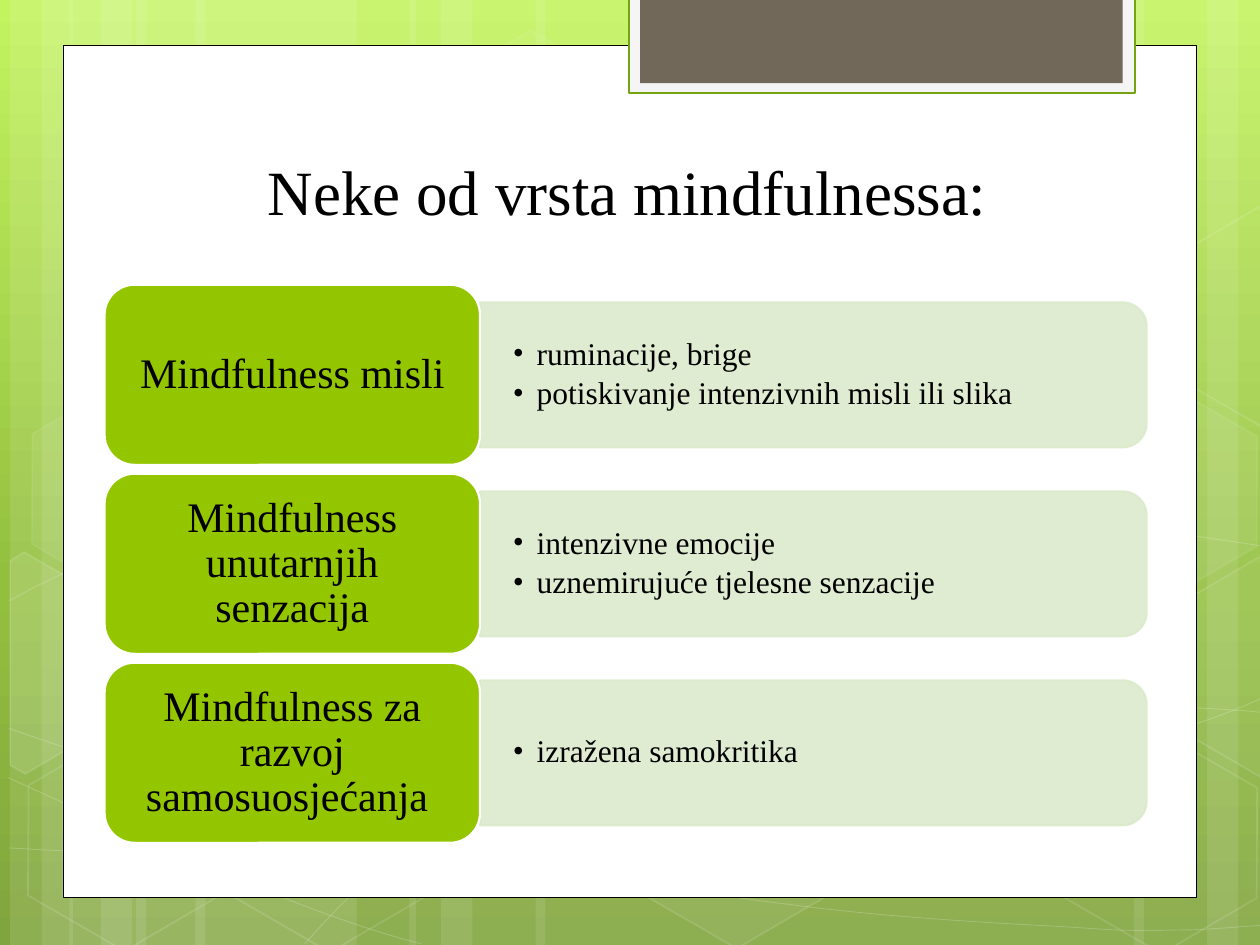
import math
from lxml import etree
from copy import deepcopy
from pptx import Presentation, util as u
from pptx.dml.color import RGBColor
from pptx.enum import shapes, text
from pptx.oxml.ns import qn

WHITE = RGBColor(0xFF, 0xFF, 0xFF)
BLACK = RGBColor(0x00, 0x00, 0x00)
GREEN = RGBColor(0x94, 0xC6, 0x00)
PALE = RGBColor(0xDC, 0xEA, 0xCC)
TAB_PAPER = RGBColor(0xF5, 0xF5, 0xF5)
TAB_EDGE = RGBColor(0x74, 0xA5, 0x10)
TAB_BROWN = RGBColor(0x71, 0x68, 0x5A)
SKY = [(0, RGBColor(0xC3, 0xF3, 0x5F)), (0.62, RGBColor(0x93, 0xBF, 0x3F)),
       (1, RGBColor(0x81, 0xA5, 0x3E))]
FONT = "Times New Roman"
KIND = shapes.MSO_SHAPE
TILT = 30  # degrees, for every hexagon

presentation = Presentation()
presentation.slide_width, presentation.slide_height = u.Inches(10), u.Inches(7.5)
cell = presentation.slide_width // 10  # square grid: 10 columns, 7.5 rows
slide = presentation.slides.add_slide(presentation.slide_layouts[5])
items = slide.shapes


def cells(*lengths):
    return [round(length * cell) for length in lengths]


def paint(shape, fill=None, line=None, width=1.0, fill_alpha=100, line_alpha=100):
    """Fill and outline a shape; alphas are percentages."""
    shape.shadow.inherit = False
    for part, color in ((shape.fill, fill), (shape.line.fill, line)):
        if color is None:
            part.background()
        else:
            part.solid()
            part.fore_color.rgb = color
    if line is not None:
        shape.line.width = u.Pt(width)
    properties = shape._element.spPr
    for route, alpha in (("a:solidFill", fill_alpha), ("a:ln/a:solidFill", line_alpha)):
        steps = "/".join(qn(step) for step in (route + "/a:srgbClr").split("/"))
        color = properties.find(steps)
        if color is not None and alpha < 100:
            etree.SubElement(color, qn("a:alpha")).set("val", str(alpha * 1000))


# Background gradient, top to bottom
background = slide.background.fill
background.gradient()
background.gradient_angle = 270
stop_list = slide._element.find(".//" + qn("a:gsLst"))
stop_list.append(deepcopy(stop_list[0]))
for stop, (position, color) in zip(background.gradient_stops, SKY):
    stop.position = position
    stop.color.rgb = color

# Translucent vertical bands
for left, width in [(1.08, 1.75), (0.08, 0.5), (0.33, 0.83), (1.55, 1.75),
                    (0.55, 0.5), (0.8, 0.83), (7.33, 1.75), (9.58, 0.5),
                    (9, 0.83), (4.25, 3.08), (3.25, 0.5), (3.5, 0.83)]:
    band = items.add_shape(KIND.RECTANGLE, *cells(left, 0, width, 7.5))
    paint(band, WHITE, fill_alpha=10)

# Sweeping curves: a start point, then cubic segments of three points each
curves = [
    [(0.07, 6.73), (0.61, 6.76), (1.15, 6.79), (1.9, 6.78), (2.65, 6.77), (3.58, 6.75),
     (4.58, 6.65), (5.58, 6.55), (7, 6.36), (7.92, 6.17), (8.83, 5.98), (9.77, 5.68),
     (10.07, 5.51)],
    [(0.07, 4.77), (0.36, 4.61), (0.65, 4.46), (1.21, 4.31), (1.78, 4.16), (2.59, 3.94),
     (3.47, 3.87), (4.36, 3.8), (5.44, 3.79), (6.54, 3.87), (7.64, 3.95), (9.47, 4.26),
     (10.07, 4.34)],
    [(0.06, 6.17), (1.27, 6.72), (2.47, 7.27), (3.34, 7.49)],
    [(0.07, 5.78), (0.38, 5.89), (0.7, 6), (1.28, 6.16), (1.86, 6.31), (2.73, 6.56),
     (3.57, 6.73), (4.4, 6.9), (5.45, 7.08), (6.28, 7.18), (7.11, 7.29), (8, 7.33),
     (8.53, 7.36), (9.05, 7.4), (9.19, 7.38), (9.45, 7.38), (9.71, 7.37), (9.89, 7.35),
     (10.07, 7.34)],
    [(2.42, 7.49), (2.6, 7.29), (2.78, 7.09), (3.02, 6.91), (3.26, 6.73), (3.6, 6.53),
     (3.88, 6.39), (4.16, 6.25), (4.33, 6.19), (4.7, 6.09), (5.06, 5.99), (5.73, 5.85),
     (6.08, 5.78), (6.44, 5.71), (6.49, 5.71), (6.8, 5.69), (7.11, 5.66), (7.6, 5.63),
     (7.94, 5.62), (8.29, 5.61), (8.86, 5.62), (8.86, 5.62), (9.08, 5.62), (9.31, 5.62),
     (9.53, 5.62), (9.71, 5.63), (9.88, 5.64), (9.97, 5.65), (10.06, 5.66),
     (10.03, 5.65), (10.06, 5.66)],
]
for points in curves:
    builder = items.build_freeform(*cells(*points[0]))
    builder.add_line_segments([cells(*point) for point in points[1:]], close=False)
    curve = builder.convert_to_shape()
    # Join every three straight steps into one cubic segment
    steps = curve._element.findall(".//" + qn("a:lnTo"))
    outline = steps[0].getparent()
    for first in range(0, len(steps), 3):
        cubic = etree.SubElement(outline, qn("a:cubicBezTo"))
        for step in steps[first:first + 3]:
            cubic.append(step[0])
            outline.remove(step)
    paint(curve, line=WHITE, width=0.5, line_alpha=20)

# Hexagons: left, top, fill alpha, line alpha
for left, top, fill_alpha, line_alpha in [
        (3.34, 0.36, 4, 8), (4.97, 5.89, 6, 12), (0.11, 5.91, 0, 12),
        (0.14, 3.12, 7, 8), (1.74, 5.92, 0, 12), (7.53, 4.53, 10, 12),
        (8.34, 5.93, 0, 12), (8.34, 3.14, 7, 8)]:
    hexagon = items.add_shape(KIND.HEXAGON, *cells(left, top, 1.75, 1.52))
    hexagon.adjustments[0] = 0.285
    hexagon.rotation = TILT
    paint(hexagon, WHITE if fill_alpha else None, WHITE, 1, fill_alpha, line_alpha)

# Hexagons cut off by the slide's edges: fill alpha, centre, corners on the slide
cosine, sine = math.cos(math.radians(TILT)), math.sin(math.radians(TILT))
for fill_alpha, (x0, y0), points in [
        (10, (0.36, 5.35), [(0.08, 4.45), (0.19, 4.38), (0.96, 4.82), (0.95, 5.7),
                            (0.2, 6.14), (0.08, 6.07)]),
        (4, (9.85, 5.2), [(9.26, 4.85), (10.01, 4.41), (10.09, 4.46), (10.09, 6.13),
                          (10.02, 6.17), (9.26, 5.73)]),
        (0, (9.85, 2.41), [(9.26, 2.07), (10.01, 1.63), (10.1, 1.68), (10.09, 3.35),
                           (10.02, 3.39), (9.26, 2.95)])]:
    # Turn the corners back, so that the shape's own rotation restores them
    corners = [cells(x0 + (x - x0) * cosine + (y - y0) * sine,
                     y0 - (x - x0) * sine + (y - y0) * cosine) for x, y in points]
    builder = items.build_freeform(*corners[0])
    builder.add_line_segments(corners[1:])
    cut_hexagon = builder.convert_to_shape()
    cut_hexagon.rotation = TILT
    paint(cut_hexagon, WHITE if fill_alpha else None, WHITE, 1, fill_alpha, 12)

# White card and the tab hanging from the top
for box, fill, line, width in [
        ((0.5, 0.36, 9, 6.76), WHITE, BLACK, 0.5),
        ((4.99, -0.02, 4.02, 0.76), TAB_PAPER, TAB_EDGE, 1.25),
        ((5.08, -0.02, 3.83, 0.68), TAB_BROWN, None, 0)]:
    paint(items.add_shape(KIND.RECTANGLE, *cells(*box)), fill, line, width)

# Title, brought in front of the card
title = items.title
title.left, title.top, title.width, title.height = cells(1.14, 1.12, 7.68, 0.74)
items._spTree.append(title._element)
title.text_frame.vertical_anchor = text.MSO_ANCHOR.BOTTOM
# Each entry: shape, lines, size, space after, bulleted
texts = [(title, ["Neke od vrsta mindfulnessa:"], 36, 0, False)]

# Rows: pale panel, its bullets, green label
rows = [
    ("Mindfulness misli", ["ruminacije, brige", "potiskivanje intenzivnih misli ili slika"]),
    ("Mindfulness unutarnjih senzacija",
     ["intenzivne emocije", "uznemirujuće tjelesne senzacije"]),
    ("Mindfulness za razvoj samosuosjećanja ", ["izražena samokritika"]),
]
for index, (name, bullets) in enumerate(rows):
    top = 2.26 + 1.5 * index
    panel = items.add_shape(KIND.ROUND_2_SAME_RECTANGLE, *cells(5.88, top - 1.93, 1.15, 5.29))
    panel.rotation = 90
    paint(panel, PALE, PALE, 1.25, 90, 90)

    bullet_box = items.add_textbox(*cells(3.8, top + 0.2, 5.24, 1.03))
    label = items.add_shape(KIND.ROUNDED_RECTANGLE, *cells(0.83, top, 2.98, 1.43))
    paint(label, GREEN, WHITE, 1.25)
    for shape, side, edge in ((bullet_box, 0.27, 0.14), (label, 0.1, 0.05)):
        frame = shape.text_frame
        frame.word_wrap = True
        frame.vertical_anchor = text.MSO_ANCHOR.MIDDLE
        frame.margin_left = frame.margin_right = u.Inches(side)
        frame.margin_top = frame.margin_bottom = u.Inches(edge)
    texts += [(bullet_box, bullets, 18, 3, True), (label, [name], 24, 0, False)]

# Text of the title, labels and bullets
for shape, lines, size, space_after, bulleted in texts:
    frame = shape.text_frame
    for index, line in enumerate(lines):
        paragraph = frame.add_paragraph() if index else frame.paragraphs[0]
        paragraph.alignment = text.PP_ALIGN.LEFT if bulleted else text.PP_ALIGN.CENTER
        paragraph.line_spacing = 1.0 if shape is title else 0.9
        paragraph.space_after = u.Pt(space_after)
        if len(lines) == 1:
            paragraph.space_before = u.Pt(space_after)
        if bulleted:
            properties = paragraph._p.get_or_add_pPr()
            properties.set("marL", str(u.Inches(0.19)))
            properties.set("indent", str(-u.Inches(0.19)))
            etree.SubElement(properties, qn("a:buFont")).set("typeface", FONT)
            etree.SubElement(properties, qn("a:buChar")).set("char", "•")
        run = paragraph.add_run()
        run.text = line
        run.font.name, run.font.size = FONT, u.Pt(size)
        run.font.color.rgb = BLACK

presentation.save("out.pptx")
